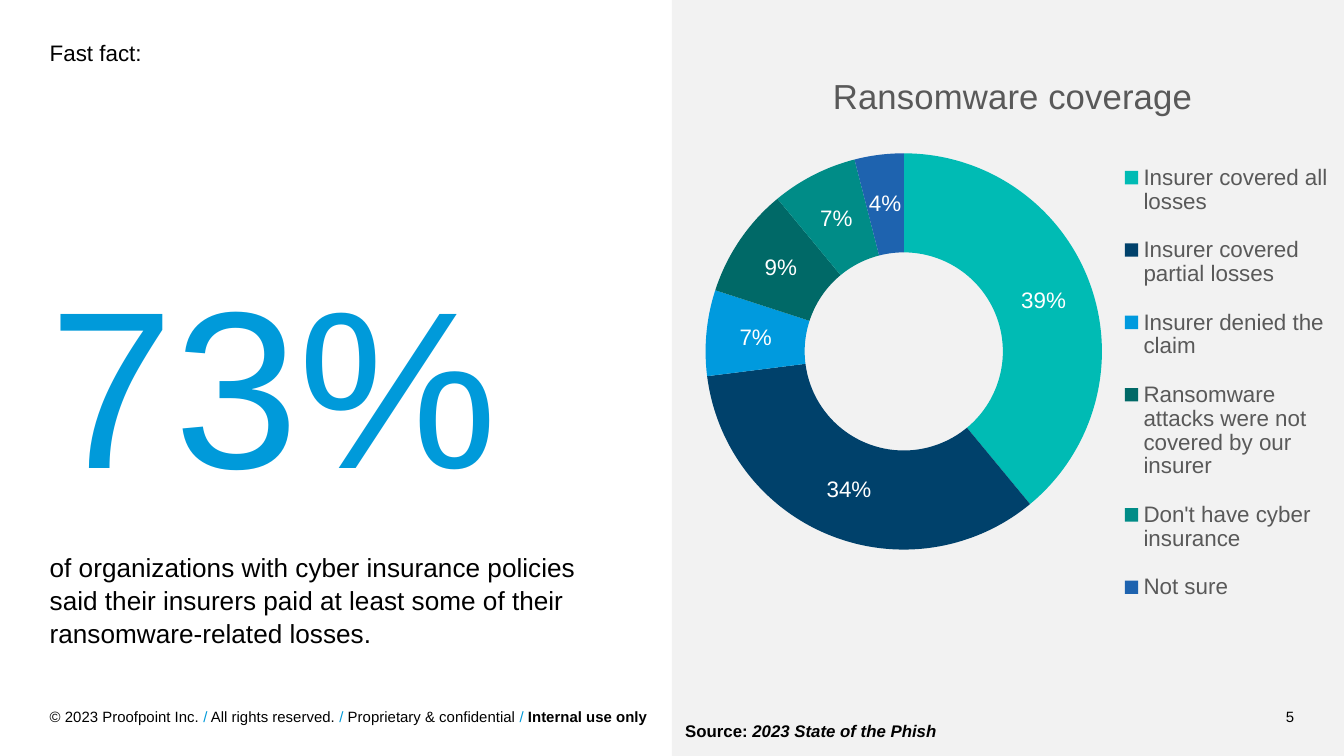
from lxml import etree
from pptx import Presentation
from pptx.chart.data import CategoryChartData
from pptx.dml.color import RGBColor
from pptx.enum.chart import XL_CHART_TYPE, XL_LEGEND_POSITION
from pptx.enum.shapes import MSO_SHAPE
from pptx.enum.text import MSO_ANCHOR, PP_ALIGN
from pptx.oxml.ns import qn
from pptx.util import Cm, Pt

DOUGHNUT = XL_CHART_TYPE.DOUGHNUT
RIGHT_LEGEND = XL_LEGEND_POSITION.RIGHT
RECTANGLE = MSO_SHAPE.RECTANGLE
TOP, MIDDLE, BOTTOM = MSO_ANCHOR.TOP, MSO_ANCHOR.MIDDLE, MSO_ANCHOR.BOTTOM
LEFT, RIGHT = PP_ALIGN.LEFT, PP_ALIGN.RIGHT

FONT, BLACK, WHITE, GRAY, BLUE = "Arial", "000000", "FFFFFF", "595959", "009ADA"
WIDTH, HEIGHT = 25.4, 14.29
HALF, MARGIN, COLUMN = WIDTH / 2, 0.94, 10.82

COVERAGE = [
    ("Insurer covered all losses", 0.39, "00BBB4"),
    ("Insurer covered partial losses", 0.34, "00416B"),
    ("Insurer denied the claim", 0.07, "009ADE"),
    ("Ransomware attacks were not covered by our insurer", 0.09, "006967"),
    ("Don't have cyber insurance", 0.07, "008C87"),
    ("Not sure", 0.04, "1E63AF"),
]
CHART_TITLE = "Ransomware coverage"
HEADING = "Fast fact:"
FIGURE = "73%"
STATEMENT = ("of organizations with cyber insurance policies said their insurers "
             "paid at least some of their ransomware-related losses.")
FOOTER = ["© 2023 Proofpoint Inc. ", "/", " All rights reserved. ", "/ ",
          "Proprietary & confidential ", "/ ", "Internal use only"]
SOURCE = ["Source: ", "2023 State of the Phish"]


def rgb(value):
    """Return the colour for a hex string."""
    return RGBColor.from_string(value)


def style(font, size, color):
    """Set the face, size and colour of a font."""
    font.name, font.size = FONT, Pt(size)
    font.color.rgb = rgb(color)


def write(sp, texts, size, color=BLACK, anchor=TOP, align=LEFT, spacing=None, inset=0):
    """Write one paragraph into a shape and return its runs."""
    tf = sp.text_frame
    tf.word_wrap, tf.vertical_anchor = True, anchor
    if inset is not None:
        tf.margin_left = tf.margin_top = tf.margin_right = tf.margin_bottom = Cm(inset)
    p = tf.paragraphs[0]
    p.alignment, p.line_spacing = align, spacing
    style(p.font, size, color)
    for text in texts:
        p.add_run().text = text
    return p.runs


def add_text(s, box, texts, size, **options):
    """Add a text box at a place in centimetres and return its runs."""
    return write(s.shapes.add_textbox(*map(Cm, box)), texts, size, **options)


def place(element, after, inner=False, **position):
    """Give a chart part a manual layout, placed after one of its children."""
    for old in element.findall(qn("c:layout")):
        element.remove(old)
    layout = etree.Element(qn("c:layout"))
    manual = etree.SubElement(layout, qn("c:manualLayout"))
    settings = [("layoutTarget", "inner")] if inner else []
    settings += [("xMode", "edge"), ("yMode", "edge"), *position.items()]
    for name, value in settings:
        etree.SubElement(manual, qn(f"c:{name}")).set("val", str(value))
    if after is None:
        element.insert(0, layout)
    else:
        element.find(qn(after)).addnext(layout)


def add_coverage_chart(s):
    """Add the doughnut chart with its title, labels and legend."""
    data = CategoryChartData(number_format="0%")
    data.categories = [name for name, _, _ in COVERAGE]
    data.add_series("Series 1", [share for _, share, _ in COVERAGE])
    box = map(Cm, (HALF, 0.79, HALF, 11.71))
    chart = s.shapes.add_chart(DOUGHNUT, *box, data).chart
    style(chart.font, 10, BLACK)

    chart.has_title = True
    p = chart.chart_title.text_frame.paragraphs[0]
    p.text = CHART_TITLE
    style(p.font, 18.6, GRAY)
    p.font.bold = False

    chart.has_legend = True
    legend = chart.legend
    legend.position, legend.include_in_layout = RIGHT_LEGEND, False
    style(legend.font, 12, GRAY)

    plot = chart.plots[0]
    plot.vary_by_categories = True
    plot.has_data_labels = True
    labels = plot.data_labels
    labels.show_value, labels.show_percentage = True, False
    labels.number_format, labels.number_format_is_linked = "0%", False
    style(labels.font, 12, WHITE)
    for i, (_, _, color) in enumerate(COVERAGE):
        fill = plot.series[0].points[i].format.fill
        fill.solid()
        fill.fore_color.rgb = rgb(color)

    root = chart.element
    next(root.iter(qn("c:holeSize"))).set("val", "60")
    place(next(root.iter(qn("c:title"))), "c:tx", x=0.23, y=0.04)
    place(next(root.iter(qn("c:plotArea"))), None, inner=True, x=0.05, y=0.18, w=0.59, h=0.64)
    place(next(root.iter(qn("c:legend"))), "c:legendPos", x=0.66, y=0.16, w=0.33, h=0.78)


def main():
    """Build the slide and save it."""
    prs = Presentation()
    prs.slide_width, prs.slide_height = Cm(WIDTH), Cm(HEIGHT)
    s = prs.slides.add_slide(prs.slide_layouts[5])

    panel = s.shapes.add_shape(RECTANGLE, Cm(HALF), 0, Cm(HALF), Cm(HEIGHT))
    panel.shadow.inherit = False
    panel.line.fill.background()
    panel.fill.solid()
    panel.fill.fore_color.rgb = rgb(BLACK)
    tint = next(panel.element.spPr.iter(qn("a:srgbClr")))
    etree.SubElement(tint, qn("a:alpha")).set("val", "5000")

    title = s.shapes.title
    title.left, title.top, title.width, title.height = map(Cm, (MARGIN, 0.79, COLUMN, 2.24))
    write(title, [HEADING], 12, spacing=0.9)

    add_coverage_chart(s)
    add_text(s, (MARGIN, 3.91, COLUMN, 5.79), [FIGURE], 120, color=BLUE, anchor=BOTTOM)
    add_text(s, (MARGIN, 10.39, COLUMN, 2.11), [STATEMENT], 14, spacing=1.05)

    runs = add_text(s, (MARGIN, 13.31, 11.76, 0.46), FOOTER, 8, anchor=MIDDLE)
    for r in runs[1::2]:
        r.font.color.rgb = rgb(BLUE)
    runs[-1].font.bold = True
    add_text(s, (19.38, 13.31, 5.08, 0.46), ["5"], 8, anchor=MIDDLE, align=RIGHT)

    runs = add_text(s, (HALF, 13.49, 5.31, 0.64), SOURCE, 9, inset=None)
    for r in runs:
        r.font.bold = True
    runs[-1].font.italic = True

    prs.save("out.pptx")


if __name__ == "__main__":
    main()
